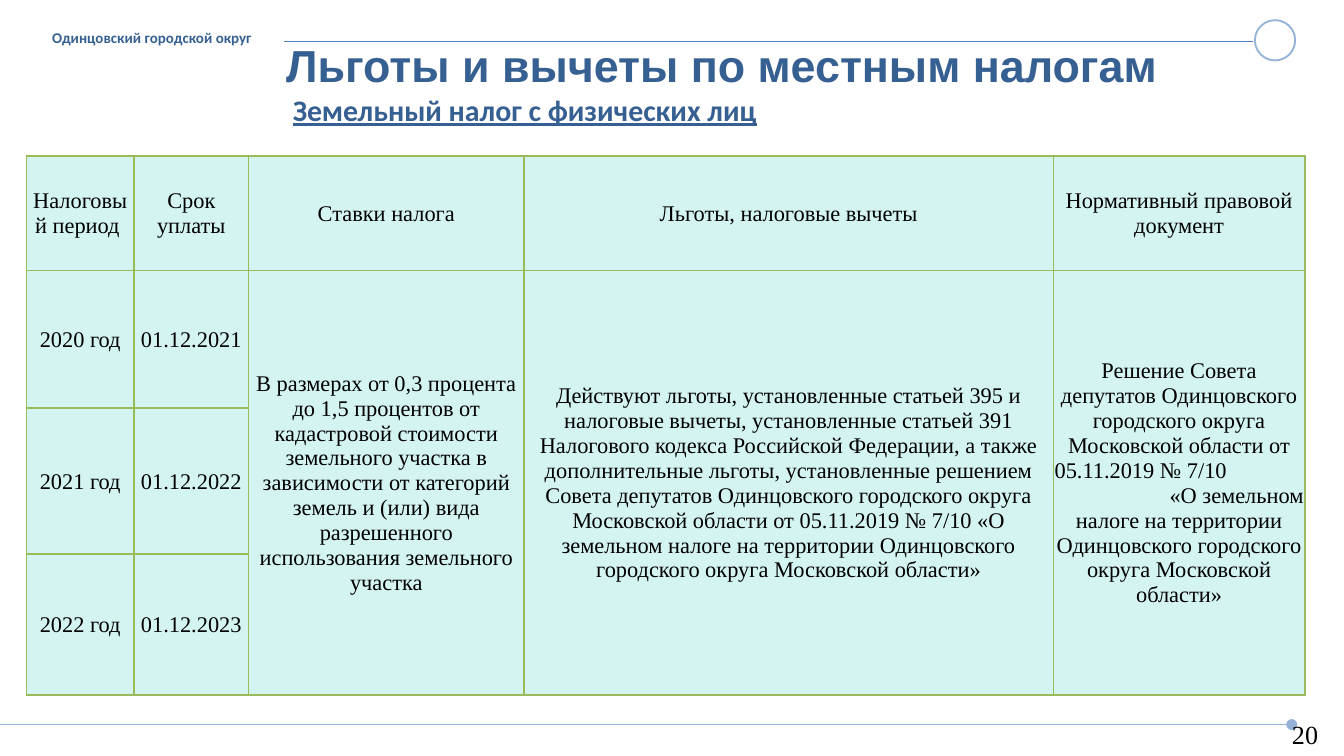
from lxml import etree
from pptx import Presentation
from pptx.dml.color import RGBColor
from pptx.enum.shapes import MSO_CONNECTOR, MSO_SHAPE
from pptx.enum.text import MSO_ANCHOR, PP_ALIGN
from pptx.oxml.ns import qn
from pptx.util import Pt

LEFT, CENTER, RIGHT = PP_ALIGN.LEFT, PP_ALIGN.CENTER, PP_ALIGN.RIGHT
TOP, MIDDLE = MSO_ANCHOR.TOP, MSO_ANCHOR.MIDDLE
STRAIGHT = MSO_CONNECTOR.STRAIGHT
CIRCLE = MSO_SHAPE.FLOWCHART_CONNECTOR

COLORS = {
    "heading": "376092",
    "top_rule": "4B7EBC",
    "pale_rule": "95B3D7",
    "cell": "D4F4F2",
    "grid": "9BBB59",
    "text": "000000",
}
FORMATS = {
    "title": {"name": "Arial", "size": Pt(24), "bold": True, "color": "heading"},
    "indent": {"name": "Calibri", "size": Pt(16), "bold": True, "color": "heading"},
    "subtitle": {"name": "Calibri", "size": Pt(16), "bold": True,
                 "underline": True, "color": "heading"},
    "district": {"name": "Calibri", "size": Pt(8), "bold": True, "color": "heading"},
    "page": {"name": "Times New Roman", "size": Pt(14), "color": "text"},
    "cell": {"name": "Times New Roman", "size": Pt(12), "bold": False, "color": "text"},
}
CELL_MARGINS = {
    "margin_left": Pt(0.7),
    "margin_right": Pt(0.7),
    "margin_top": Pt(0.7),
    "margin_bottom": 0,
}
COLUMN_WIDTHS = [57.6, 61.4, 147.6, 283.5, 134.8]
ROW_HEIGHTS = [61.3, 73.8, 78, 75.7]

HEADERS = [
    "Налоговый период ",
    "Срок уплаты",
    "Ставки налога",
    "Льготы, налоговые вычеты",
    "Нормативный правовой документ",
]
PERIODS = [
    ("2020 год", "01.12.2021"),
    ("2021 год", "01.12.2022"),
    ("2022 год", "01.12.2023"),
]
RATES = (
    "В размерах от 0,3 процента до 1,5 процентов от кадастровой стоимости "
    "земельного участка в зависимости от категорий земель и (или) вида "
    "разрешенного использования земельного участка"
)
BENEFITS = (
    "Действуют льготы, установленные статьей 395 и налоговые вычеты, "
    "установленные статьей 391 Налогового кодекса Российской Федерации, а также "
    "дополнительные льготы, установленные решением Совета депутатов Одинцовского "
    "городского округа Московской области от 05.11.2019 № 7/10 «О земельном налоге "
    "на территории Одинцовского городского округа Московской области»"
)
DECISION = [
    ("Решение Совета депутатов Одинцовского городского округа "
     "Московской области от", CENTER),
    ("05.11.2019 № 7/10", LEFT),
    ("«О земельном", RIGHT),
    ("налоге на территории Одинцовского городского округа "
     "Московской области»", CENTER),
]


def rgb(color):
    return RGBColor.from_string(COLORS[color])


class TaxSlide:
    """Holds the current slide and draws elements in its style."""

    def __init__(self, slide):
        self.slide = slide

    def fill_text(self, frame, paragraphs):
        """Fill a frame from (alignment, [(text, format name), ...]) pairs."""
        frame.word_wrap = True
        for index, (alignment, runs) in enumerate(paragraphs):
            paragraph = frame.paragraphs[0] if index == 0 else frame.add_paragraph()
            paragraph.alignment = alignment
            for text, format_name in runs:
                run = paragraph.add_run()
                run.text = text
                for attribute, value in FORMATS[format_name].items():
                    if attribute == "color":
                        run.font.color.rgb = rgb(value)
                    else:
                        setattr(run.font, attribute, value)

    def text(self, box, paragraphs, anchor=MIDDLE):
        frame = self.slide.shapes.add_textbox(*map(Pt, box)).text_frame
        frame.vertical_anchor = anchor
        self.fill_text(frame, paragraphs)

    def rule(self, start, end, y, color, dot=False):
        """Draw a horizontal line, with a round end if dot is set."""
        rule = self.slide.shapes.add_connector(STRAIGHT, Pt(start), Pt(y), Pt(end), Pt(y))
        rule.line.color.rgb = rgb(color)
        rule.line.width = Pt(0.75)
        if dot:
            etree.SubElement(rule.line._get_or_add_ln(), qn("a:tailEnd"), type="oval")
        etree.SubElement(rule._element.spPr, qn("a:effectLst"))

    def ring(self, box, color):
        ring = self.slide.shapes.add_shape(CIRCLE, *map(Pt, box))
        ring.shadow.inherit = False
        ring.fill.background()
        ring.line.color.rgb = rgb(color)
        ring.line.width = Pt(1)

    def style_cell(self, cell):
        properties = cell._tc.get_or_add_tcPr()
        for side in ("a:lnL", "a:lnR", "a:lnT", "a:lnB"):
            border = etree.SubElement(properties, qn(side), w=str(Pt(1)))
            fill = etree.SubElement(border, qn("a:solidFill"))
            etree.SubElement(fill, qn("a:srgbClr"), val=COLORS["grid"])
        cell.fill.solid()
        cell.fill.fore_color.rgb = rgb("cell")
        cell.vertical_anchor = MIDDLE
        for margin, value in CELL_MARGINS.items():
            setattr(cell, margin, value)

    def table(self, left, top, rows):
        """Draw a table; each cell is None or a list of (text, alignment)."""
        table = self.slide.shapes.add_table(
            len(ROW_HEIGHTS), len(COLUMN_WIDTHS), Pt(left), Pt(top),
            Pt(sum(COLUMN_WIDTHS)), Pt(sum(ROW_HEIGHTS))).table
        table.first_row = table.horz_banding = False
        for column, width in zip(table.columns, COLUMN_WIDTHS):
            column.width = Pt(width)
        for row, height in zip(table.rows, ROW_HEIGHTS):
            row.height = Pt(height)
        for row, contents in zip(table.rows, rows):
            for cell, content in zip(row.cells, contents):
                self.style_cell(cell)
                if content:
                    self.fill_text(cell.text_frame, [
                        (alignment, [(text, "cell")]) for text, alignment in content])
        return table


def main():
    presentation = Presentation()
    presentation.slide_width, presentation.slide_height = Pt(720), Pt(405)
    page = TaxSlide(presentation.slides.add_slide(presentation.slide_layouts[6]))

    page.rule(152, 671, 22.2, "top_rule")
    page.ring((672.3, 10.8, 21.6, 21.6), "pale_rule")
    page.rule(0, 692, 388.2, "pale_rule", dot=True)
    page.text((146.2, 16.6, 524.2, 55.4), [
        (LEFT, [("Льготы и вычеты по местным налогам", "title")]),
        (LEFT, [(" ", "indent"), ("Земельный налог с физических лиц", "subtitle")]),
    ], TOP)
    page.text((20.9, 14.6, 123.8, 11.5),
              [(LEFT, [("Одинцовский городской округ", "district")])])
    page.text((683.3, 385.3, 31.7, 15.8), [(CENTER, [("20", "page")])])

    rows = [[[(header, CENTER)] for header in HEADERS]]
    for period, deadline in PERIODS:
        rows.append([[(period, CENTER)], [(deadline, CENTER)], None, None, None])
    rows[1][2:] = [[(RATES, CENTER)], [(BENEFITS, CENTER)], DECISION]
    table = page.table(14.2, 83.6, rows)
    for column in range(2, len(HEADERS)):
        table.cell(1, column).merge(table.cell(len(PERIODS), column))

    presentation.save("out.pptx")


if __name__ == "__main__":
    main()
